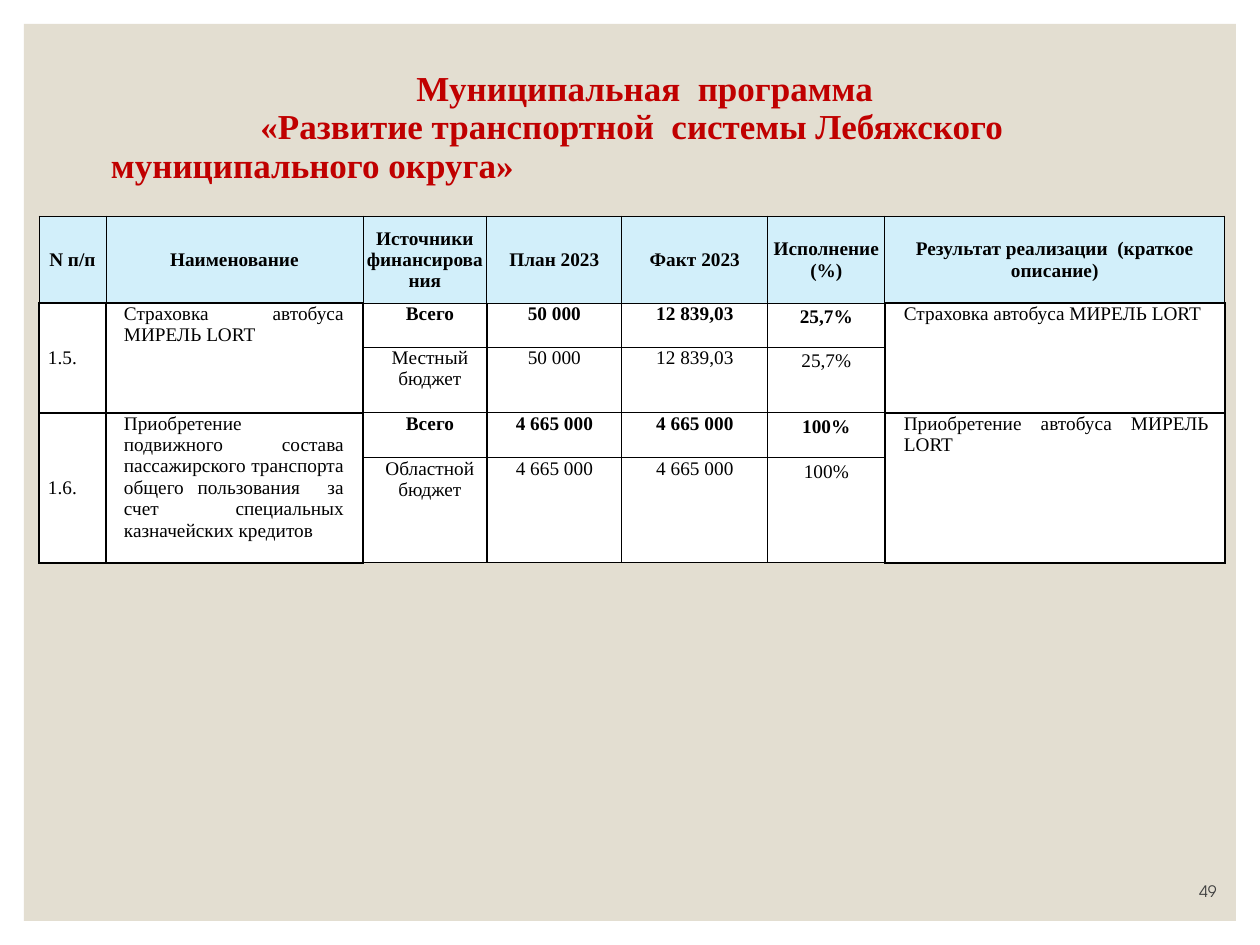
"""Builds the slide on the municipal transport programme."""
from dataclasses import dataclass

from lxml.etree import SubElement
from pptx import Presentation
from pptx.dml.color import RGBColor
from pptx.enum.shapes import MSO_SHAPE
from pptx.enum.text import MSO_ANCHOR, PP_ALIGN
from pptx.oxml.ns import qn
from pptx.util import Pt

PX = 914400 / 126


@dataclass(frozen=True)
class Theme:
    panel: str = "E3DED1"
    title: str = "C00000"
    header: str = "D2EFFA"
    body: str = "FFFFFF"
    ink: str = "000000"
    number: str = "404040"
    serif: str = "Times New Roman"
    sans: str = "TeX Gyre Adventor"
    title_size: int = 20
    table_size: int = 11
    number_size: int = 9
    thin: float = 0.5
    thick: float = 1


theme = Theme()


def format_paragraph(para, size, color, font, bold=False, align=PP_ALIGN.CENTER, left=0):
    para.alignment = align
    properties = para._p.get_or_add_pPr()
    properties.set("marL", str(round(left * PX)))
    properties.set("indent", "0")
    for span in para.runs:
        span.font.size = Pt(size)
        span.font.bold = bold
        span.font.name = font
        span.font.color.rgb = RGBColor.from_string(color)


def set_borders(cell, widths):
    properties = cell._tc.get_or_add_tcPr()
    for position, (side, width) in enumerate(widths.items()):
        line = SubElement(properties, qn(f"a:ln{side}"), w=str(Pt(width)))
        fill = SubElement(line, qn("a:solidFill"))
        SubElement(fill, qn("a:srgbClr"), val=theme.ink)
        properties.insert(position, line)


deck = Presentation()
deck.slide_width, deck.slide_height = round(1260 * PX), round(945 * PX)
page = deck.slides.add_slide(deck.slide_layouts[6])

panel = page.shapes.add_shape(
    MSO_SHAPE.RECTANGLE, *[round(v * PX) for v in (24, 24, 1212, 897)])
panel.shadow.inherit = False
panel.fill.solid()
panel.fill.fore_color.rgb = RGBColor.from_string(theme.panel)
panel.line.fill.background()

number_box = page.shapes.add_textbox(*[round(v * PX) for v in (1078, 869, 151, 38)])
number_frame = number_box.text_frame
number_frame.word_wrap = True
number_frame.vertical_anchor = MSO_ANCHOR.BOTTOM
number_frame.text = "49"
format_paragraph(number_frame.paragraphs[0], theme.number_size, theme.number,
                 theme.sans, align=PP_ALIGN.RIGHT)

title_lines = [
    ("Муниципальная  программа", PP_ALIGN.CENTER, 26),
    ("«Развитие транспортной  системы Лебяжского", PP_ALIGN.CENTER, 0),
    ("муниципального округа»", PP_ALIGN.LEFT, 71),
]
rows = [
    ["N п/п", "Наименование", "Источники финансирования", "План 2023", "Факт 2023",
     "Исполнение (%)", "Результат реализации  (краткое описание)"],
    ["1.5.", "Страховка автобуса МИРЕЛЬ LORT", "Всего", "50 000", "12 839,03", "25,7%",
     "Страховка автобуса МИРЕЛЬ LORT"],
    ["", "", "Местный бюджет", "50 000", "12 839,03", "25,7%", ""],
    ["1.6.", "Приобретение подвижного состава пассажирского транспорта общего "
     "пользования  за счет специальных казначейских кредитов",
     "Всего", "4 665 000", "4 665 000", "100%", "Приобретение автобуса МИРЕЛЬ LORT"],
    ["", "", "Областной бюджет", "4 665 000", "4 665 000", "100%", ""],
]
column_widths = [67, 257, 124, 135, 146, 117, 340]
row_heights = [177, 87, 44, 66, 45, 105]
merged_columns = (0, 1, 6)
column_indents = [9, 9, 10, 0, 0, 0, 10]
left_margins = [0, 9, 9, 9, 9, 9, 9]
right_margins = [0, 19, 9, 9, 9, 9, 16]
column_aligns = [PP_ALIGN.LEFT, PP_ALIGN.JUSTIFY, *[PP_ALIGN.CENTER] * 4, PP_ALIGN.JUSTIFY]
vertical_lines = [theme.thick] * 4 + [theme.thin] * 2 + [theme.thick] * 2

frame = page.shapes.add_table(
    len(row_heights), len(column_widths),
    *[round(v * PX) for v in (39, 39, sum(column_widths), sum(row_heights))])
for style in frame._element.iter(qn("a:tableStyleId")):
    style.text = "{2D5ABB26-0587-4C30-8999-92F81FD0307C}"
table = frame.table
table.first_row = table.horz_banding = False
for column, width in zip(table.columns, column_widths):
    column.width = round(width * PX)
for row, height in zip(table.rows, row_heights):
    row.height = round(height * PX)

title_cell = table.cell(0, 0)
title_cell.merge(table.cell(0, 6))
title_cell.vertical_anchor = MSO_ANCHOR.MIDDLE
title_cell.margin_left = title_cell.margin_right = title_cell.margin_top = round(PX)
title_cell.margin_bottom = 0
title_cell.text_frame.text = "\n".join(line for line, _, _ in title_lines)
for para, (_, align, left) in zip(title_cell.text_frame.paragraphs, title_lines):
    format_paragraph(para, theme.title_size, theme.title, theme.serif, True, align, left)

for top in (2, 4):
    for column in merged_columns:
        table.cell(top, column).merge(table.cell(top + 1, column))

for row, texts in enumerate(rows, start=1):
    is_header = row == 1
    for column, text in enumerate(texts):
        cell = table.cell(row, column)
        is_merged = column in merged_columns
        cell.margin_left = round((1 if is_header else left_margins[column]) * PX)
        cell.margin_right = round((1 if is_header else right_margins[column]) * PX)
        cell.margin_top = round(PX) if is_header else 0
        cell.margin_bottom = 0
        cell.vertical_anchor = MSO_ANCHOR.MIDDLE if is_header or column == 0 else MSO_ANCHOR.TOP
        cell.fill.solid()
        cell.fill.fore_color.rgb = RGBColor.from_string(theme.header if is_header else theme.body)

        level = theme.thick if is_merged else theme.thin
        borders = {
            "L": theme.thin if is_header else vertical_lines[column],
            "R": theme.thin if is_header else vertical_lines[column + 1],
            "T": theme.thin if is_header else level,
            "B": level,
        }
        if cell.is_spanned:
            del borders["T"]
        set_borders(cell, borders)
        if not text:
            continue

        cell.text_frame.text = text
        para = cell.text_frame.paragraphs[0]
        is_total = row in (2, 4) and not is_merged
        format_paragraph(para, theme.table_size, theme.ink, theme.serif, is_header or is_total,
                         PP_ALIGN.CENTER if is_header else column_aligns[column],
                         0 if is_header else column_indents[column])
        if column == 5 and not is_header:
            para.line_spacing = 1.15
            para.space_after = Pt(10)

deck.save("out.pptx")
